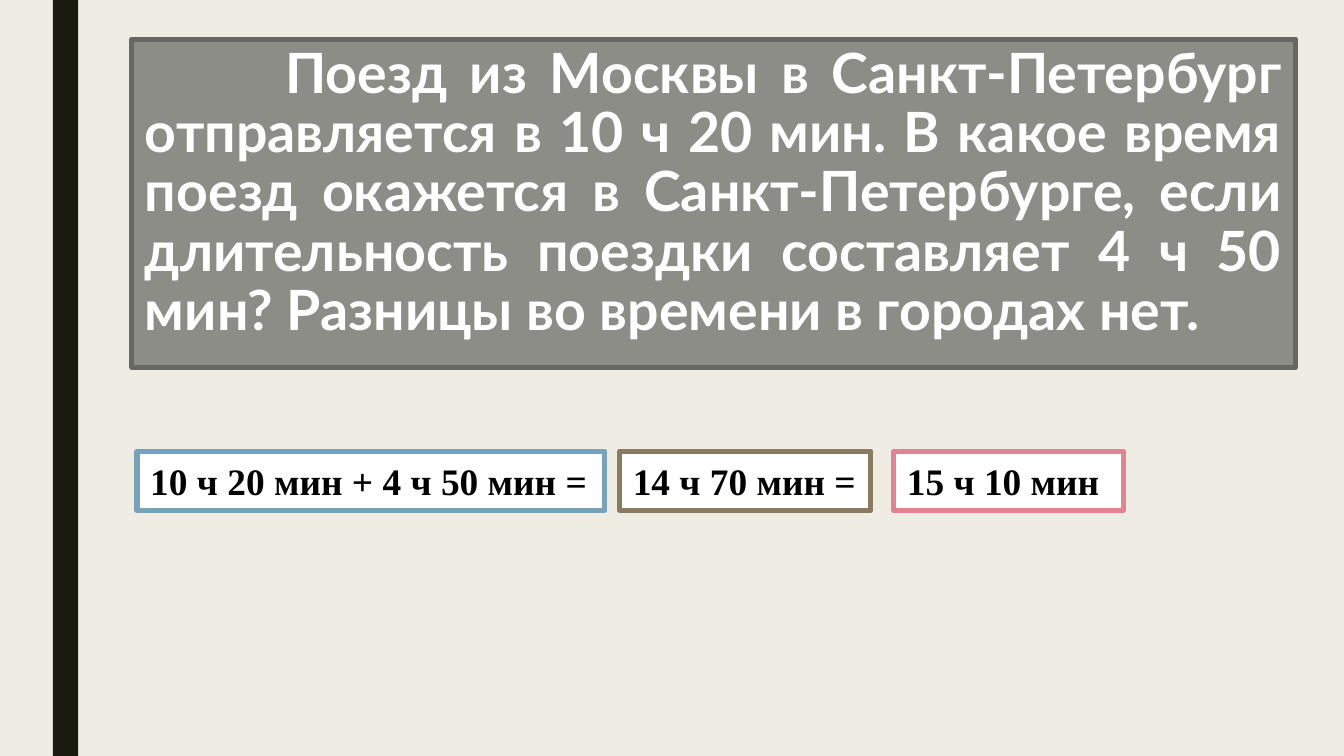
import pptx
import pptx.util
import pptx.dml.color
import pptx.enum.shapes
import pptx.enum.text

Cm = pptx.util.Cm
Pt = pptx.util.Pt
Align = pptx.enum.text.PP_ALIGN
RECT = pptx.enum.shapes.MSO_SHAPE.RECTANGLE


def paint(part, color):
    """Fill a shape, line, font or background with one hex colour."""
    fill = part if hasattr(part, "solid") else part.fill
    fill.solid()
    fill.fore_color.rgb = pptx.dml.color.RGBColor.from_string(color)


def write(shape, text, font, size, color, align=Align.LEFT, space=1.0, right=0.25):
    frame = shape.text_frame
    frame.word_wrap = True
    frame.auto_size = pptx.enum.text.MSO_AUTO_SIZE.NONE
    frame.vertical_anchor = pptx.enum.text.MSO_ANCHOR.TOP
    frame.margin_left, frame.margin_right = Cm(0.25), Cm(right)
    frame.margin_top = frame.margin_bottom = Cm(0.13)
    para = frame.paragraphs[0]
    para.alignment = align
    para.line_spacing = space
    run = para.add_run()
    run.text = text
    run.font.name = font
    run.font.size = Pt(size)
    run.font.bold = True
    paint(run.font, color)
    return para


deck = pptx.Presentation()
deck.slide_width, deck.slide_height = Cm(25.4), Cm(14.29)
slide = deck.slides.add_slide(deck.slide_layouts[5])
paint(slide.background, "EFEDE3")

# Dark stripe on the left
stripe = slide.shapes.add_shape(RECT, Cm(1), 0, Cm(0.48), deck.slide_height)
stripe.shadow.inherit = False
paint(stripe, "191B0E")
stripe.line.fill.background()

# Problem text
title = slide.shapes.title
title.left, title.top = Cm(2.49), Cm(0.74)
title.width, title.height = Cm(22), Cm(6.2)
paint(title, "8C8D86")
paint(title.line, "686863")
title.line.width = Pt(2.75)
para = write(
    title,
    "Поезд из Москвы в Санкт-Петербург отправляется в 10 ч 20 мин. "
    "В какое время поезд окажется в Санкт-Петербурге, если длительность "
    "поездки составляет 4 ч 50 мин? Разницы во времени в городах нет.",
    font="Lato", size=29.7, color="FFFFFF", align=Align.JUSTIFY, space=0.89)
props = para._p.get_or_add_pPr()
props.set("marL", "0")
props.set("indent", str(Cm(2.65)))

# Steps of the solution
steps = [
    ("10 ч 20 мин + 4 ч 50 мин =", 2.59, 8.84, "77A2BB"),
    ("14 ч 70 мин =", 11.71, 4.75, "897B61"),
    ("15 ч 10 мин", 16.89, 4.34, "E28394"),
]
for text, left, width, color in steps:
    box = slide.shapes.add_shape(RECT, Cm(left), Cm(8.53), Cm(width), Cm(1.12))
    box.shadow.inherit = False
    paint(box, "FFFFFF")
    paint(box.line, color)
    box.line.width = Pt(2.75)
    write(box, text, font="Times New Roman", size=20, color="000000", right=0)

deck.save("out.pptx")
